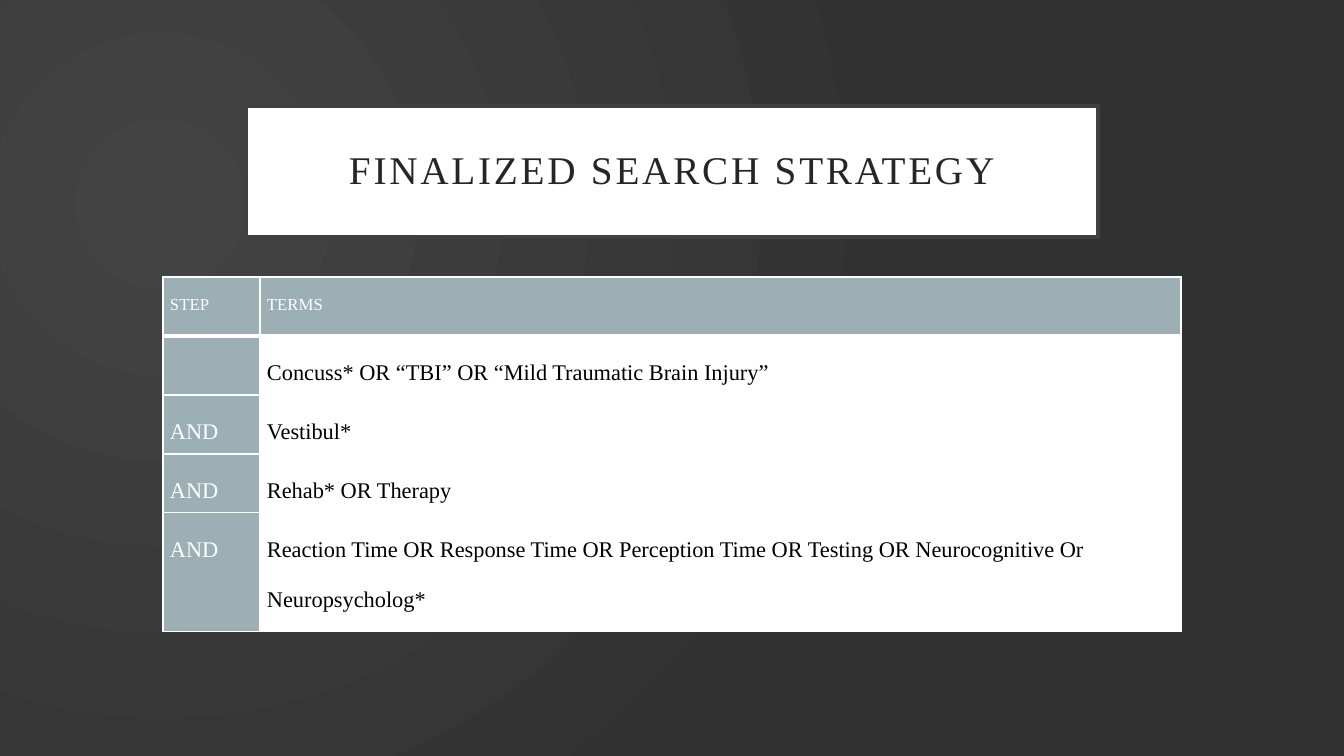
from dataclasses import dataclass

from lxml.etree import SubElement
from pptx import Presentation
from pptx.dml.color import RGBColor
from pptx.enum.shapes import MSO_SHAPE
from pptx.enum.text import MSO_ANCHOR, PP_ALIGN
from pptx.oxml.ns import qn
from pptx.slide import Slide
from pptx.table import _Cell
from pptx.text.text import _Paragraph
from pptx.util import Emu, Pt

EMU_PER_PX = 914400 / 100.8
FONT = "Times New Roman"
WHITE = RGBColor(0xFF, 0xFF, 0xFF)
BLACK = RGBColor(0x00, 0x00, 0x00)
INK = RGBColor(0x26, 0x26, 0x26)
FRAME = RGBColor(0x40, 0x40, 0x40)
SLATE = RGBColor(0x9B, 0xAF, 0xB5)
GLOW = RGBColor(0x43, 0x43, 0x43)
DUSK = RGBColor(0x31, 0x31, 0x31)

COLUMN_WIDTHS = (97, 921)


@dataclass(frozen=True)
class SearchRow:
    step: str
    terms: str
    height: int = 59
    size: int = 16
    is_header: bool = False


SEARCH_ROWS = (
    SearchRow("STEP", "TERMS", size=12, is_header=True),
    SearchRow("", "Concuss* OR “TBI” OR “Mild Traumatic Brain Injury”"),
    SearchRow("AND", "Vestibul*"),
    SearchRow("AND", "Rehab* OR Therapy"),
    SearchRow(
        "AND",
        "Reaction Time OR Response Time OR Perception Time OR Testing "
        "OR Neurocognitive Or Neuropsycholog*",
        height=119,
    ),
)


def px(length: int) -> Emu:
    return Emu(round(length * EMU_PER_PX))


def paint_background(page: Slide) -> None:
    """Fill the page with a circular gradient centred at the upper left."""
    fill = page.background.fill
    fill.gradient()
    for stop, color in zip(fill.gradient_stops, (GLOW, DUSK)):
        stop.color.rgb = color
    gradient = next(page.background._cSld.iter(qn("a:gradFill")))
    gradient.remove(gradient.find(qn("a:lin")))
    circle = SubElement(gradient, qn("a:path"), {"path": "circle"})
    SubElement(circle, qn("a:fillToRect"),
               {"l": "50000", "t": "55000", "r": "125000", "b": "100000"})


def style_paragraph(paragraph: _Paragraph, size: int, color: RGBColor, spacing: float) -> None:
    paragraph.line_spacing = spacing
    paragraph.font.name = FONT
    paragraph.font.size = Pt(size)
    paragraph.font.color.rgb = color


def add_title(page: Slide, text: str) -> None:
    box = page.shapes.add_shape(MSO_SHAPE.RECTANGLE, px(246), px(106), px(852), px(131))
    box.shadow.inherit = False
    box.fill.solid()
    box.fill.fore_color.rgb = WHITE
    box.line.color.rgb = FRAME
    box.line.width = Pt(2.5)
    frame = box.text_frame
    frame.word_wrap = True
    frame.vertical_anchor = MSO_ANCHOR.MIDDLE
    frame.margin_left = frame.margin_right = px(20)
    frame.margin_top = frame.margin_bottom = px(20)
    paragraph = frame.paragraphs[0]
    paragraph.text = text
    paragraph.alignment = PP_ALIGN.CENTER
    style_paragraph(paragraph, 28, INK, 0.9)
    paragraph.font._element.set("spc", "200")


def set_borders(cell: _Cell, bottom_width: int) -> None:
    properties = cell._tc.get_or_add_tcPr()
    widths = {"a:lnL": 1, "a:lnR": 1, "a:lnT": 1, "a:lnB": bottom_width}
    for index, (side, width) in enumerate(widths.items()):
        line = SubElement(properties, qn(side), {"w": str(Pt(width))})
        properties.insert(index, line)
        fill = SubElement(line, qn("a:solidFill"))
        SubElement(fill, qn("a:srgbClr"), {"val": str(WHITE)})


def fill_cell(cell: _Cell, text: str, size: int, is_heading: bool, bottom_width: int) -> None:
    cell.margin_left = cell.margin_right = px(7)
    cell.margin_top = cell.margin_bottom = 0
    cell.fill.solid()
    cell.fill.fore_color.rgb = SLATE if is_heading else WHITE
    set_borders(cell, bottom_width)
    if text:
        paragraph = cell.text_frame.paragraphs[0]
        paragraph.text = text
        style_paragraph(paragraph, size, WHITE if is_heading else BLACK, 2.0)


def add_search_table(page: Slide) -> None:
    height = sum(row.height for row in SEARCH_ROWS)
    table = page.shapes.add_table(
        len(SEARCH_ROWS), len(COLUMN_WIDTHS),
        px(163), px(277), px(sum(COLUMN_WIDTHS)), px(height),
    ).table
    table.first_row = False
    table.horz_banding = False
    for column, width in zip(table.columns, COLUMN_WIDTHS):
        column.width = px(width)
    for index, row in enumerate(SEARCH_ROWS):
        table.rows[index].height = px(row.height)
        bottom_width = 3 if row.is_header else 1
        fill_cell(table.cell(index, 0), row.step, row.size, True, bottom_width)
        fill_cell(table.cell(index, 1), row.terms, row.size, row.is_header, bottom_width)


def main() -> None:
    deck = Presentation()
    deck.slide_width, deck.slide_height = px(1344), px(756)
    page = deck.slides.add_slide(deck.slide_layouts[6])
    paint_background(page)
    add_title(page, "FINALIZED SEARCH STRATEGY")
    add_search_table(page)
    deck.save("out.pptx")


if __name__ == "__main__":
    main()
